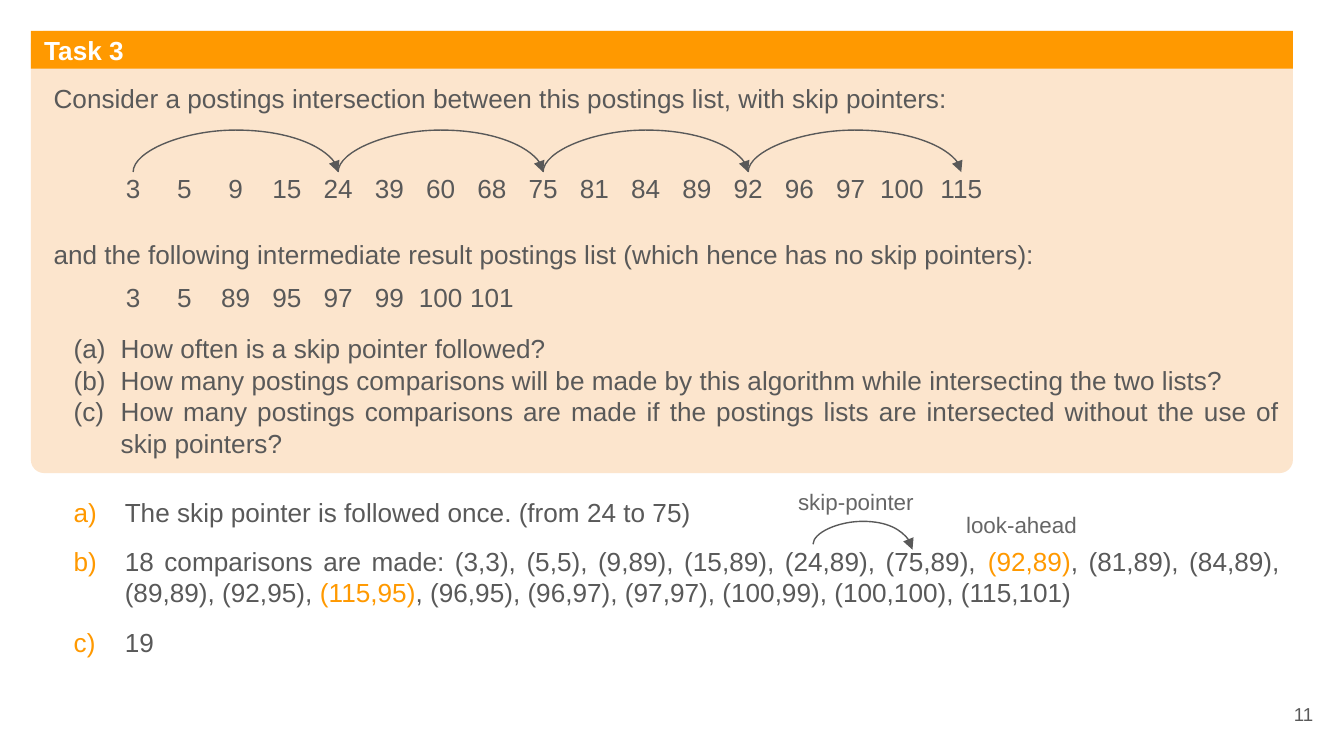
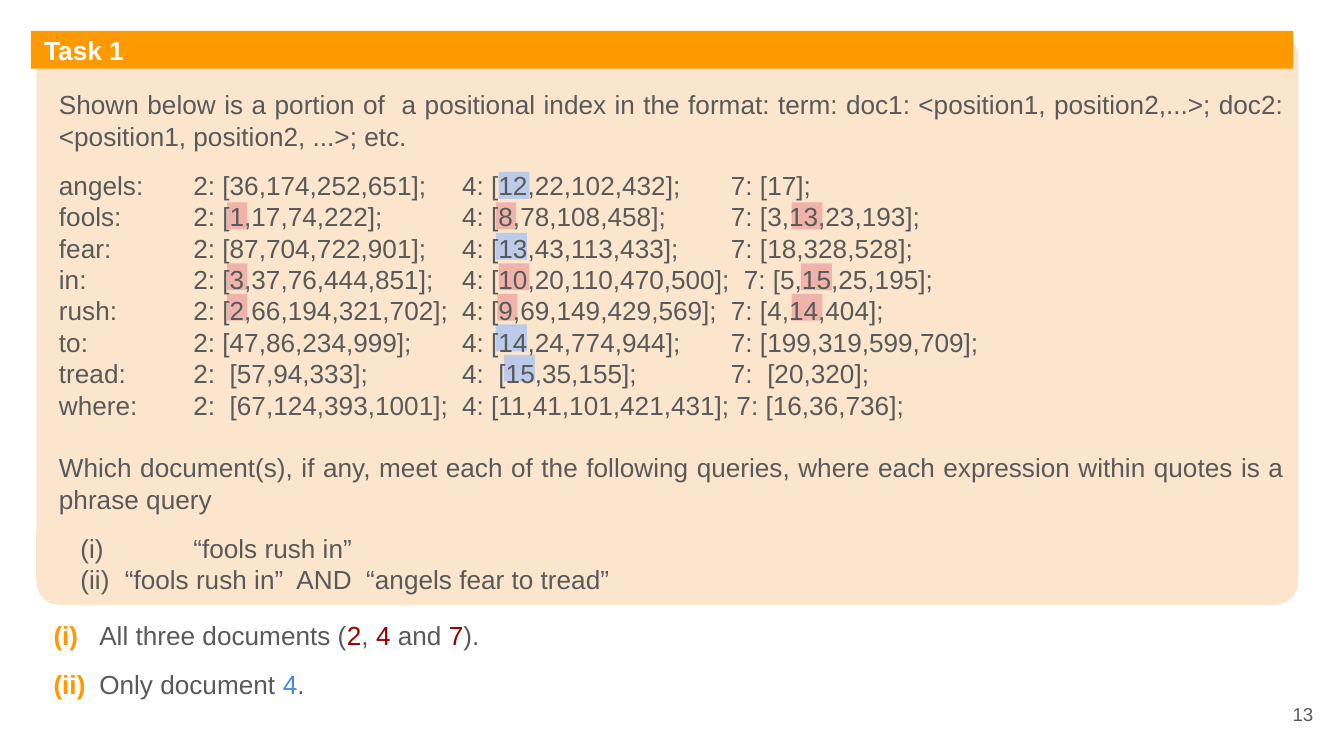
from lxml.etree import SubElement
from pptx import Presentation
from pptx.dml.color import RGBColor
from pptx.enum.shapes import MSO_CONNECTOR, MSO_SHAPE
from pptx.enum.text import MSO_ANCHOR, PP_ALIGN
from pptx.oxml.ns import qn
from pptx.util import Inches, Pt

# Shared style
FONT = "Arial"
ORANGE, CREAM, WHITE = "FF9900", "FCE5CD", "FFFFFF"
GREY, LABEL_GREY = "595959", "666666"
DARK_RED, BLUE = "980000", "4A86E8"
PALE_RED, PALE_BLUE = ("EA9999", 65), ("A4C2F4", 73)  # colour, opacity in percent
LINE = 16.8  # points from one 14 pt line to the next
SMALL_GAP = 9.6
BAND = (0.23, 0.23, 9.39, 0.28)
BODY_LEFT, BODY_WIDTH = 0.3, 9.32

# Task 3: each paragraph is (text or runs, layout options)
QUESTION = {"hang": (0.5, 0.35), "number": ("alphaLcParenBoth", GREY)}
ANSWER = {"hang": (0.53, 0.38), "number": ("alphaLcParenR", ORANGE)}
POSTINGS_TASK = [
    ("Consider a postings intersection between this postings list, with skip pointers:", {}),
    ("and the following intermediate result postings list (which hence has no skip pointers):",
     {"before": 4 * LINE}),
    ("How often is a skip pointer followed?", {**QUESTION, "before": 2 * LINE}),
    ("How many postings comparisons will be made by this algorithm while intersecting "
     "the two lists?", QUESTION),
    ("How many postings comparisons are made if the postings lists are intersected "
     "without the use of skip pointers?", QUESTION),
]
POSTINGS_ANSWERS = [
    ("The skip pointer is followed once. (from 24 to 75)", ANSWER),
    ([("18 comparisons are made: (3,3), (5,5), (9,89), (15,89), (24,89), (75,89), ", GREY),
      ("(92,89)", ORANGE),
      (", (81,89), (84,89), (89,89), (92,95), ", GREY),
      ("(115,95)", ORANGE),
      (", (96,95), (96,97), (97,97), (100,99), (100,100), (115,101)", GREY)],
     {**ANSWER, "before": SMALL_GAP}),
    ("19", {**ANSWER, "before": SMALL_GAP}),
]
SKIP_LIST = [3, 5, 9, 15, 24, 39, 60, 68, 75, 81, 84, 89, 92, 96, 97, 100, 115]
RESULT_LIST = [3, 5, 89, 95, 97, 99, 100, 101]
SKIP_LENGTH = 4
SKIP_TOP, RESULT_TOP = 1.28, 2.09
CELL_LEFT, CELL_WIDTH, CELL_HEIGHT = 0.8, 5.72 / 15, 0.31
LAST_CELL_SHIFT = 0.06
LABELS = [("skip-pointer", 5.84, 3.53), ("look-ahead", 7.09, 3.7)]

# Task 1
INDEX_LINES = [
    "angels:\t2: [36,174,252,651];\t4: [12,22,102,432];\t7: [17];",
    "fools:\t2: [1,17,74,222];\t4: [8,78,108,458];\t7: [3,13,23,193];",
    "fear:\t2: [87,704,722,901];\t4: [13,43,113,433];\t7: [18,328,528];",
    "in:\t2: [3,37,76,444,851];\t4: [10,20,110,470,500];  7: [5,15,25,195];",
    "rush:\t2: [2,66,194,321,702];\t4: [9,69,149,429,569];\t7: [4,14,404];",
    "to:\t2: [47,86,234,999];\t4: [14,24,774,944];\t7: [199,319,599,709];",
    "tread:\t2:  [57,94,333];\t4:  [15,35,155];\t7:  [20,320];",
    "where:\t2:  [67,124,393,1001];\t4: [11,41,101,421,431]; 7: [16,36,736];",
]
INDEX_TABS = (1, 3, 5)
INDEX_TASK = [
    ("Shown below is a portion of  a positional index in the format: term: doc1: "
     "<position1, position2,...>; doc2: <position1, position2, ...>; etc.", {}),
    *[(line, {"tabs": INDEX_TABS, "before": 0 if row else SMALL_GAP})
      for row, line in enumerate(INDEX_LINES)],
    ("Which document(s), if any, meet each of the following queries, where each "
     "expression within quotes is a phrase query", {"before": LINE}),
    ("(i)\t“fools rush in”", {"hang": (1, 0.84), "before": SMALL_GAP}),
    ("(ii)\t“fools rush in”  AND  “angels fear to tread”", {"hang": (0.49, 0.33)}),
]
INDEX_ANSWERS = [
    ([("(i)", ORANGE, True), ("\tAll three documents (", GREY), ("2", DARK_RED),
      (", ", GREY), ("4", DARK_RED), (" and ", GREY), ("7", DARK_RED), (").", GREY)],
     {"hang": (0.34, 0.34)}),
    ([("(ii)", ORANGE, True), ("\tOnly document ", GREY), ("4", BLUE), (".", GREY)],
     {"hang": (0.34, 0.34), "before": SMALL_GAP}),
]
# Marked positions: index row, left, number of digits, tint
MARKS = [
    (0, 3.71, 2, PALE_BLUE), (2, 3.69, 2, PALE_BLUE),
    (5, 3.69, 2, PALE_BLUE), (6, 3.75, 2, PALE_BLUE),
    (1, 1.69, 1, PALE_RED), (3, 1.69, 1, PALE_RED), (4, 1.69, 1, PALE_RED),
    (1, 3.69, 1, PALE_RED), (3, 3.71, 2, PALE_RED), (4, 3.7, 1, PALE_RED),
    (1, 5.89, 2, PALE_RED), (3, 5.96, 2, PALE_RED), (4, 5.89, 2, PALE_RED),
]
MARK_WIDTHS = {1: 0.15, 2: 0.23}
MARK_TOP, MARK_PITCH, MARK_HEIGHT = 1.28, 1.36 / 6, 0.2


def color(hex_string):
    return RGBColor.from_string(hex_string)


def add_block(slide, kind, box, fill, corner=None, opacity=None):
    shape = slide.shapes.add_shape(kind, *map(Inches, box))
    shape.shadow.inherit = False
    shape.line.fill.background()
    shape.fill.solid()
    shape.fill.fore_color.rgb = color(fill)
    if corner is not None:
        shape.adjustments[0] = corner
    if opacity is not None:
        tint = shape.fill._xPr.find(".//" + qn("a:srgbClr"))
        SubElement(tint, qn("a:alpha"), val=str(opacity * 1000))
    return shape


def set_margins(text_frame, margin):
    text_frame.word_wrap = True
    text_frame.margin_left = text_frame.margin_right = Inches(margin)
    text_frame.margin_top = text_frame.margin_bottom = Inches(margin)


def format_run(run, size, hex_string, bold=False):
    run.font.name = FONT
    run.font.size = Pt(size)
    run.font.bold = bold
    run.font.color.rgb = color(hex_string)


def add_label(slide, box, text, size=14, hex_string=GREY, align=PP_ALIGN.LEFT,
              margin=0.1, anchor=MSO_ANCHOR.TOP):
    text_frame = slide.shapes.add_textbox(*map(Inches, box)).text_frame
    set_margins(text_frame, margin)
    text_frame.vertical_anchor = anchor
    text_frame.text = text
    paragraph = text_frame.paragraphs[0]
    paragraph.alignment = align
    format_run(paragraph.runs[0], size, hex_string)


def layout_paragraph(paragraph, before=0, hang=None, number=None, tabs=()):
    paragraph.alignment = PP_ALIGN.JUSTIFY
    paragraph.line_spacing = Pt(LINE)
    paragraph.space_before = Pt(before)
    properties = paragraph._p.get_or_add_pPr()
    if hang:
        left, outdent = hang
        properties.set("marL", str(Inches(left)))
        properties.set("indent", str(-Inches(outdent)))
    if number:
        scheme, hex_string = number
        SubElement(SubElement(properties, qn("a:buClr")), qn("a:srgbClr"), val=hex_string)
        SubElement(properties, qn("a:buAutoNum"), type=scheme)
    if tabs:
        tab_list = SubElement(properties, qn("a:tabLst"))
        for position in tabs:
            SubElement(tab_list, qn("a:tab"), pos=str(Inches(position)), algn="l")


def add_body(slide, box, content):
    text_frame = slide.shapes.add_textbox(*map(Inches, box)).text_frame
    set_margins(text_frame, 0.1)
    for index, (runs, options) in enumerate(content):
        paragraph = text_frame.add_paragraph() if index else text_frame.paragraphs[0]
        layout_paragraph(paragraph, **options)
        for text, *style in [(runs, GREY)] if isinstance(runs, str) else runs:
            run = paragraph.add_run()
            run.text = text
            format_run(run, 14, *style)


def add_arc(slide, start, end, rise):
    """Curved arrow that leaves upwards and lands from above."""
    drop = max(Inches(end[1] - start[1]), 600)  # the curve needs some depth
    span = Inches(end[0] - start[0])
    left = Inches((start[0] + end[0]) / 2) - drop // 2
    top = Inches(start[1]) + drop // 2 - span // 2
    connector = slide.shapes.add_connector(
        MSO_CONNECTOR.CURVE, left, top, left + drop, top + span)
    connector.line.color.rgb = color(GREY)
    connector.line.width = Pt(0.75)
    properties = connector._element.spPr
    properties.xfrm.set("rot", str(270 * 60000))
    properties.xfrm.set("flipH", "1")
    bend = round(-Inches(rise) / drop * 100000)
    SubElement(properties.find(".//" + qn("a:avLst")), qn("a:gd"),
               name="adj1", fmla=f"val {bend}")
    SubElement(connector.line._get_or_add_ln(), qn("a:tailEnd"), type="triangle")
    SubElement(properties, qn("a:effectLst"))


def cell_left(index):
    shift = LAST_CELL_SHIFT if index == len(SKIP_LIST) - 1 else 0
    return CELL_LEFT + index * CELL_WIDTH + shift


def add_postings(slide, postings, top):
    for index, posting in enumerate(postings):
        add_label(slide, (cell_left(index), top, CELL_WIDTH, CELL_HEIGHT), str(posting),
                  align=PP_ALIGN.CENTER, margin=0)


def add_task_slide(presentation, title, number, panel, corner):
    slide = presentation.slides.add_slide(presentation.slide_layouts[6])
    add_block(slide, MSO_SHAPE.ROUNDED_RECTANGLE, panel, CREAM, corner)
    band = add_block(slide, MSO_SHAPE.ROUNDED_RECTANGLE, BAND, ORANGE, 0)
    set_margins(band.text_frame, 0.1)
    band.text_frame.vertical_anchor = MSO_ANCHOR.MIDDLE
    band.text_frame.text = title
    paragraph = band.text_frame.paragraphs[0]
    paragraph.alignment = PP_ALIGN.LEFT
    format_run(paragraph.runs[0], 14, WHITE, True)
    add_label(slide, (9.27, 5.1, 0.6, 0.43), str(number), 10,
              align=PP_ALIGN.RIGHT, anchor=MSO_ANCHOR.MIDDLE)
    return slide


def build_postings_slide(presentation):
    slide = add_task_slide(presentation, "Task 3", 11, (0.23, 0.23, 9.39, 3.29), 0.03)
    add_body(slide, (BODY_LEFT, 0.51, BODY_WIDTH, 0.43), POSTINGS_TASK)
    add_postings(slide, SKIP_LIST, SKIP_TOP)
    add_postings(slide, RESULT_LIST, RESULT_TOP)
    # Skip pointers
    for index in range(0, len(SKIP_LIST) - 1, SKIP_LENGTH):
        start, end = [(cell_left(stop) + CELL_WIDTH / 2, SKIP_TOP)
                      for stop in (index, index + SKIP_LENGTH)]
        add_arc(slide, start, end, 0.26)
    # Solution
    add_body(slide, (BODY_LEFT, 3.59, BODY_WIDTH, 1.55), POSTINGS_ANSWERS)
    add_arc(slide, (6.05, 4.05), (6.79, 4.09), 0.17)
    for text, left, top in LABELS:
        add_label(slide, (left, top, 1.06, 0.4), text, 12, LABEL_GREY)


def build_index_slide(presentation):
    slide = add_task_slide(presentation, "Task 1", 13, (0.27, 0.25, 9.39, 4.25), 0.041)
    for row, left, digits, (fill, opacity) in MARKS:
        box = (left, MARK_TOP + row * MARK_PITCH, MARK_WIDTHS[digits], MARK_HEIGHT)
        add_block(slide, MSO_SHAPE.RECTANGLE, box, fill, opacity=opacity)
    add_body(slide, (BODY_LEFT + 0.04, 0.56, BODY_WIDTH, 0.43), INDEX_TASK)
    add_body(slide, (BODY_LEFT, 4.51, BODY_WIDTH, 0.86), INDEX_ANSWERS)


def main():
    presentation = Presentation()
    presentation.slide_width, presentation.slide_height = Inches(10), Inches(5.625)
    build_postings_slide(presentation)
    build_index_slide(presentation)
    presentation.save("out.pptx")


if __name__ == "__main__":
    main()
